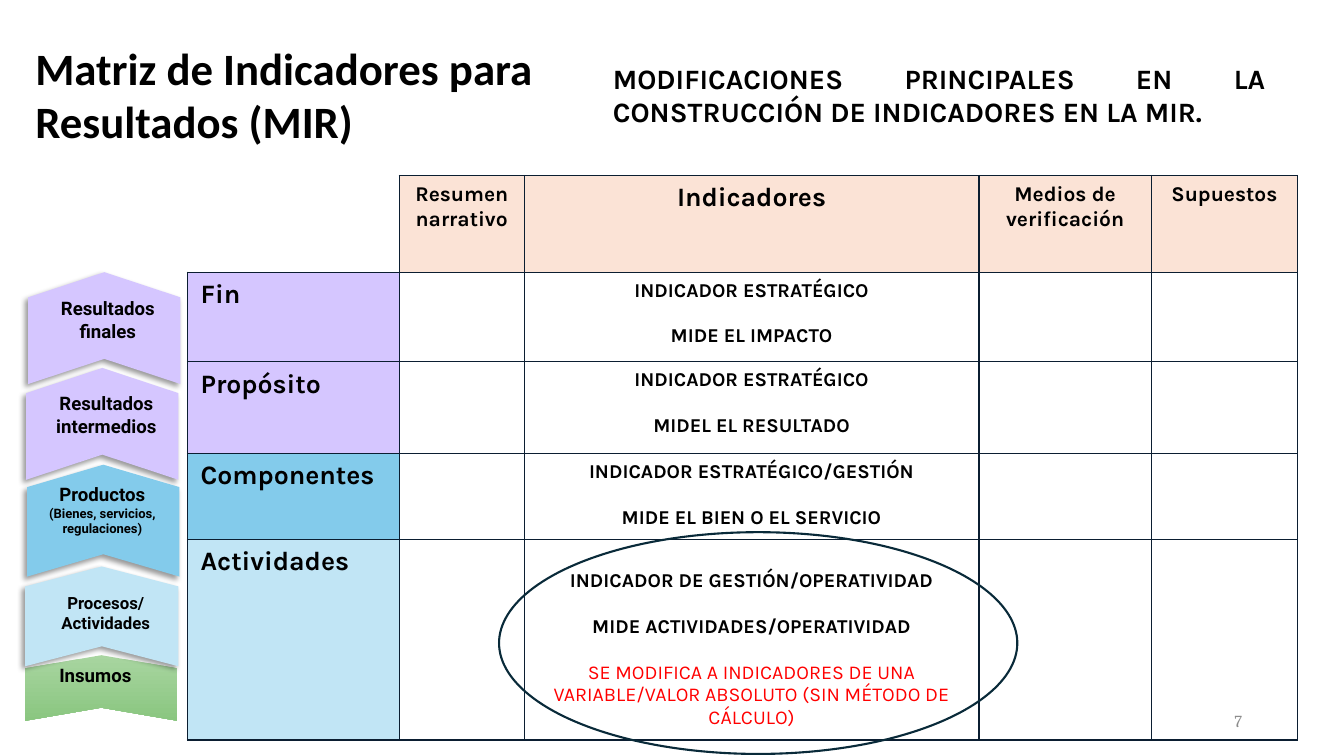
import pptx
import pptx.util
import pptx.dml.color
import pptx.enum.shapes
import pptx.enum.text
import pptx.oxml.ns
from lxml import etree

Inches, Pt = pptx.util.Inches, pptx.util.Pt
RGBColor = pptx.dml.color.RGBColor
ALIGN = pptx.enum.text.PP_ALIGN
ANCHOR = pptx.enum.text.MSO_ANCHOR
SHAPE = pptx.enum.shapes.MSO_SHAPE
qn = pptx.oxml.ns.qn

BLACK = RGBColor(0x00, 0x00, 0x00)
GRAY = RGBColor(0x8C, 0x8C, 0x8C)
RED = RGBColor(0xFF, 0x00, 0x00)
LILAC = RGBColor(0xD5, 0xC6, 0xFF)
BLUE = RGBColor(0x83, 0xCB, 0xEB)
PALE_BLUE = RGBColor(0xC1, 0xE5, 0xF5)
PEACH = RGBColor(0xFB, 0xE3, 0xD6)
LIGHT_GREEN = RGBColor(0xA8, 0xD5, 0xA0)
GREEN = RGBColor(0x8A, 0xC6, 0x80)
BORDER = RGBColor(0x0B, 0x1E, 0x31)
NAVY = RGBColor(0x09, 0x2A, 0x39)

# fill, tip ratio, chevron box, lines with sizes, text box
RESULT_CHAIN = [
    (LILAC, 0.225, (0.26, 3.65, 1.51, 1.11),
     [("Resultados intermedios", 13.3)], (0.31, 3.84, 1.49, 0.65)),
    (BLUE, 0.2, (0.27, 4.61, 1.51, 1.11),
     [("Productos", 13.3), ("(Bienes, servicios, regulaciones)", 9.3)], (0.32, 4.74, 1.39, 0.74)),
    (LILAC, 0.225, (0.28, 2.7, 1.51, 1.11),
     [("Resultados finales", 13.3)], (0.27, 2.9, 1.6, 0.65)),
    (None, 0.2, (0.25, 6.5, 1.51, 0.65),
     [("Insumos", 13.3)], (0.49, 6.54, 1.17, 0.43)),
    (PALE_BLUE, 0.2, (0.25, 5.62, 1.52, 0.99),
     [("Procesos/", 12), ("Actividades", 12)], (0.4, 5.83, 1.3, 0.61)),
]
HEADERS = [("Resumen narrativo", 15), ("Indicadores", 19),
           ("Medios de verificación", 15), ("Supuestos", 15)]
LEVELS = [
    ("Fin", LILAC, ["INDICADOR ESTRATÉGICO", "MIDE EL IMPACTO"]),
    ("Propósito", LILAC, ["INDICADOR ESTRATÉGICO", "MIDEL EL RESULTADO"]),
    ("Componentes", BLUE, ["INDICADOR ESTRATÉGICO/GESTIÓN", "MIDE EL BIEN O EL SERVICIO"]),
    ("Actividades", PALE_BLUE, ["INDICADOR DE GESTIÓN/OPERATIVIDAD", "MIDE ACTIVIDADES/OPERATIVIDAD",
     "SE MODIFICA A INDICADORES DE UNA VARIABLE/VALOR ABSOLUTO (SIN MÉTODO DE CÁLCULO)"]),
]
COLUMN_WIDTHS = [2.1, 1.24, 4.51, 1.71, 1.45]
ROW_HEIGHTS = [0.96, 0.89, 0.91, 0.85, 1.99]


class SlideBuilder:
    def __init__(self, presentation):
        self.slide = presentation.slides.add_slide(presentation.slide_layouts[5])
        self.shapes = self.slide.shapes

    def set_lines(self, frame, lines, font, align=ALIGN.LEFT, color=BLACK, bold=True, gap=0):
        """Fill a text frame with (text, size) lines, gap points apart."""
        for index, (text, size) in enumerate(lines):
            paragraph = frame.add_paragraph() if index else frame.paragraphs[0]
            paragraph.text = text
            paragraph.alignment = align
            if index and gap:
                paragraph.space_before = Pt(gap)
            paragraph.font.name = font
            paragraph.font.size = Pt(size)
            paragraph.font.bold = bold
            paragraph.font.color.rgb = color

    def title(self, text, box):
        title = self.shapes.title
        title.left, title.top, title.width, title.height = map(Inches, box)
        title.text_frame.word_wrap = True
        title.text_frame.vertical_anchor = ANCHOR.TOP
        self.set_lines(title.text_frame, [(text, 32)], "Calibri")

    def text(self, lines, box, font, shapes=None, anchor=ANCHOR.TOP, **style):
        frame = (shapes or self.shapes).add_textbox(*map(Inches, box)).text_frame
        frame.word_wrap = True
        frame.vertical_anchor = anchor
        self.set_lines(frame, lines, font, **style)

    def chevron(self, shapes, box, tip, fill):
        """Draw an upward chevron; without a fill colour it gets the green gradient."""
        left, top, width, height = box
        offset = (width - height) / 2
        shape = shapes.add_shape(SHAPE.CHEVRON, *map(
            Inches, (left + offset, top - offset, height, width)))
        shape.rotation = 270
        shape.adjustments[0] = tip
        shape.line.fill.background()
        shape.shadow.inherit = False
        if fill is None:
            shape.fill.gradient()
            shape.fill.gradient_angle = 180
            for stop, color in zip(shape.fill.gradient_stops, (LIGHT_GREEN, GREEN)):
                stop.color.rgb = color
            return
        shape.fill.solid()
        shape.fill.fore_color.rgb = fill
        effects = shape.element.spPr.find(qn("a:effectLst"))
        shadow = etree.SubElement(effects, qn("a:outerShdw"), blurRad=str(Pt(4)),
                                  dist=str(Pt(3)), dir="8100000", rotWithShape="0")
        color = etree.SubElement(shadow, qn("a:srgbClr"), val="000000")
        etree.SubElement(color, qn("a:alpha"), val="40000")

    def border(self, cell, sides):
        properties = cell._tc.get_or_add_tcPr()
        for index, side in enumerate(sides):
            line = etree.Element(qn(f"a:ln{side}"), w=str(Pt(1)))
            fill = etree.SubElement(line, qn("a:solidFill"))
            etree.SubElement(fill, qn("a:srgbClr"), val=str(BORDER))
            properties.insert(index, line)

    def table(self, left, top):
        table = self.shapes.add_table(
            len(ROW_HEIGHTS), len(COLUMN_WIDTHS), Inches(left), Inches(top),
            Inches(sum(COLUMN_WIDTHS)), Inches(sum(ROW_HEIGHTS))).table
        table.first_row = table.horz_banding = False
        for column, width in zip(table.columns, COLUMN_WIDTHS):
            column.width = Inches(width)
        for row, height in zip(table.rows, ROW_HEIGHTS):
            row.height = Inches(height)
        for index, cell in enumerate(table.iter_cells()):
            cell.margin_left = cell.margin_right = Inches(0.13)
            cell.margin_top = cell.margin_bottom = Inches(0.07)
            cell.fill.background()
            self.border(cell, "LRTB" if index else "RB")
        for column, header in enumerate(HEADERS, 1):
            self.cell(table.cell(0, column), [header], PEACH, ALIGN.CENTER)
        for row, (level, fill, indicators) in enumerate(LEVELS, 1):
            self.cell(table.cell(row, 0), [(level, 19)], fill)
            self.cell(table.cell(row, 2), [(line, 14) for line in indicators], align=ALIGN.CENTER)
        return table

    def cell(self, cell, lines, fill=None, align=ALIGN.LEFT):
        if fill is not None:
            cell.fill.solid()
            cell.fill.fore_color.rgb = fill
        self.set_lines(cell.text_frame, lines, "Karla", align, gap=16.4)

    def ellipse(self, box):
        shape = self.shapes.add_shape(SHAPE.OVAL, *map(Inches, box))
        shape.shadow.inherit = False
        shape.fill.background()
        shape.line.color.rgb = NAVY
        shape.line.width = Pt(1.5)


def main():
    presentation = pptx.Presentation()
    presentation.slide_width, presentation.slide_height = Inches(13.33), Inches(7.5)
    builder = SlideBuilder(presentation)

    builder.text([("7", 12)], (9.42, 6.95, 3, 0.4), "Cambria", anchor=ANCHOR.MIDDLE,
                 align=ALIGN.RIGHT, color=GRAY, bold=False)
    builder.title("Matriz de Indicadores para Resultados (MIR)", (0.25, 0.35, 6.57, 1.18))

    chain = builder.shapes.add_group_shape().shapes
    for fill, tip, box, _, _ in RESULT_CHAIN:
        builder.chevron(chain, box, tip, fill)
    for fill, _, _, lines, box in RESULT_CHAIN:
        builder.text(lines, box, "Roboto", shapes=chain,
                     align=ALIGN.CENTER if fill else ALIGN.LEFT)

    table = builder.table(1.86, 1.74)
    activities = table.cell(4, 2)
    activities.margin_top = Inches(0.3)
    warning = activities.text_frame.paragraphs[-1].font
    warning.bold = False
    warning.color.rgb = RED

    builder.text([("MODIFICACIONES PRINCIPALES EN LA CONSTRUCCIÓN DE INDICADORES EN LA MIR.", 20)],
                 (5.98, 0.56, 6.67, 0.77), "Karla", align=ALIGN.JUSTIFY)
    builder.ellipse((4.95, 5.28, 5.14, 2.2))
    presentation.save("out.pptx")


if __name__ == "__main__":
    main()
